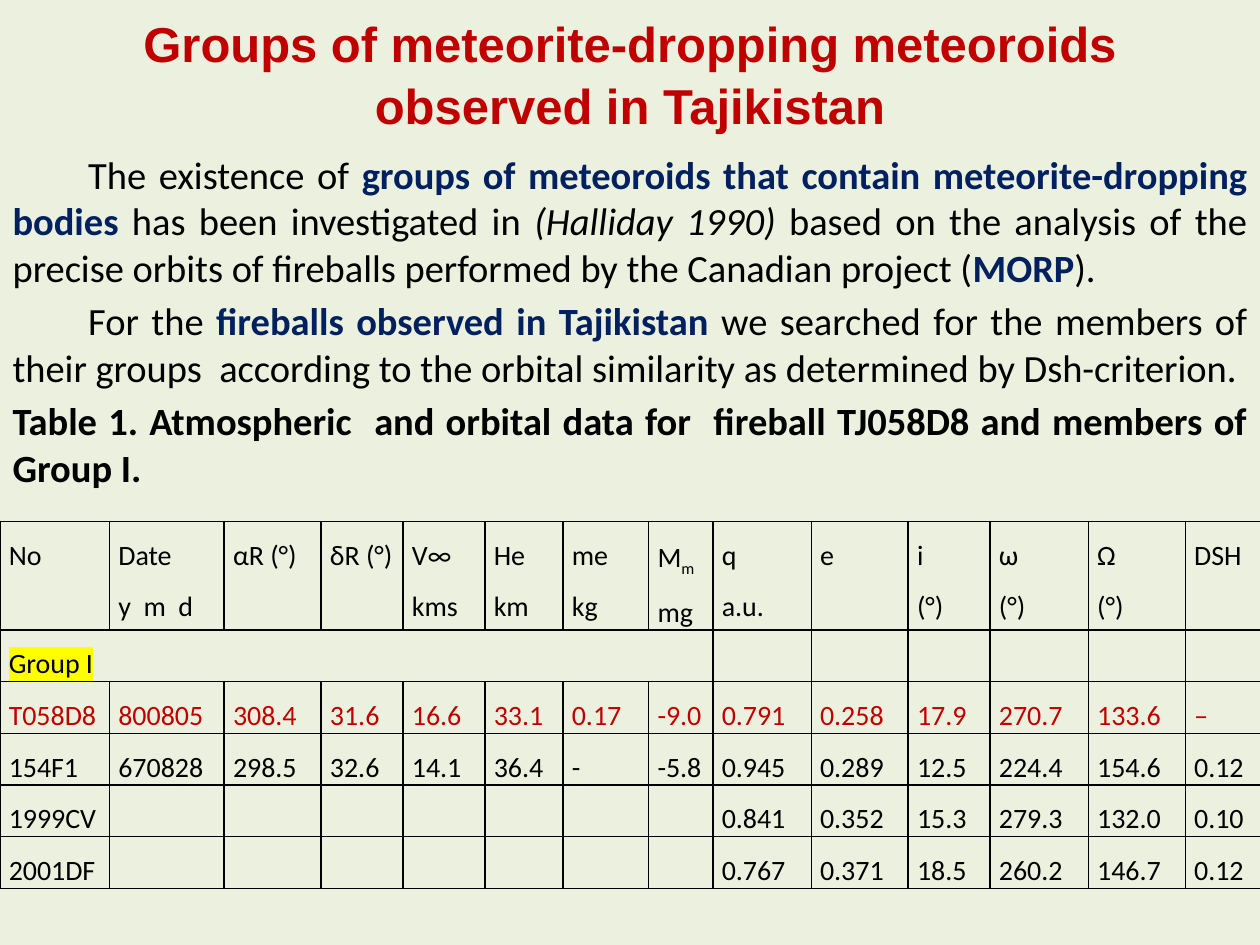
"""Build a slide on groups of meteorite-dropping meteoroids with a data table."""
from lxml import etree
from pptx import Presentation
from pptx.dml.color import RGBColor
from pptx.enum.text import MSO_ANCHOR, MSO_AUTO_SIZE, PP_ALIGN
from pptx.oxml.ns import qn
from pptx.util import Inches, Pt

CENTER, JUSTIFY = PP_ALIGN.CENTER, PP_ALIGN.JUSTIFY
MIDDLE, TOP = MSO_ANCHOR.MIDDLE, MSO_ANCHOR.TOP
NO_FIT = MSO_AUTO_SIZE.NONE

PALE_GREEN = RGBColor(0xEB, 0xF1, 0xDE)
RED = RGBColor(0xC0, 0x00, 0x00)
NAVY = RGBColor(0x00, 0x20, 0x60)
BLACK = RGBColor(0x00, 0x00, 0x00)
YELLOW = RGBColor(0xFF, 0xFF, 0x00)

TITLE = ["Groups of meteorite-dropping meteoroids", "observed in Tajikistan"]

STYLES = {
    "plain": (BLACK, False, False),
    "term": (NAVY, True, False),
    "cite": (BLACK, False, True),
    "caption": (BLACK, True, False),
}

BODY = [
    (0.6, [
        ("The existence of ", "plain"),
        ("groups of meteoroids that contain meteorite-dropping bodies", "term"),
        (" has been investigated in ", "plain"),
        ("(Halliday 1990)", "cite"),
        (" based on the analysis of the precise orbits of fireballs performed "
         "by the Canadian project (", "plain"),
        ("MORP", "term"),
        (").", "plain"),
    ]),
    (0.6, [
        ("For the ", "plain"),
        ("fireballs observed in Tajikistan", "term"),
        (" we searched for the members of their groups  according to the orbital "
         "similarity as determined by Dsh-criterion.", "plain"),
    ]),
    (0, [
        ("Table 1. Atmospheric  and orbital data for  fireball TJ058D8 "
         "and members of Group I.", "caption"),
    ]),
]

HEADERS = [["No"], ["Date", "y  m  d"], ["αR (°)"], ["δR (°)"], ["V∞", "kms"],
           ["He", "km"], ["me", "kg"], [], ["q", "a.u."], ["e"],
           ["i", "(°)"], ["ω", "(°)"], ["Ω", "(°)"], ["DSH"]]
MASS_HEADER = [("M", 0), ("m", -25000), (" mg", 0)]
MASS_COLUMN = 7
GROUP_ROW, GROUP_NAME = 1, "Group I"
HIGHLIGHTED_ROW = 2
NO_DATA = [""] * 7
DATA = [
    ["T058D8", "800805", "308.4", "31.6", "16.6", "33.1", "0.17", "-9.0",
     "0.791", "0.258", "17.9", "270.7", "133.6", "‒"],
    ["154F1", "670828", "298.5", "32.6", "14.1", "36.4", "-", "-5.8",
     "0.945", "0.289", "12.5", "224.4", "154.6", "0.12"],
    ["1999CV", *NO_DATA, "0.841", "0.352", "15.3", "279.3", "132.0", "0.10"],
    ["2001DF", *NO_DATA, "0.767", "0.371", "18.5", "260.2", "146.7", "0.12"],
]
COLUMN_WIDTHS = [0.87, 0.91, 0.77, 0.65, 0.65, 0.62, 0.68,
                 0.51, 0.78, 0.77, 0.65, 0.78, 0.77, 0.61]
ROW_HEIGHTS = [0.86] + [0.41] * 5


def add_span(para, text, size, color=BLACK, bold=False, italic=False, font="Calibri"):
    span = para.add_run()
    span.text = text
    span.font.size = Pt(size)
    span.font.name = font
    span.font.bold = bold
    span.font.italic = italic
    span.font.color.rgb = color
    return span


def next_para(frame, index):
    return frame.add_paragraph() if index else frame.paragraphs[0]


def place(box, top, height, anchor):
    box.left, box.top = Inches(0), Inches(top)
    box.width, box.height = Inches(10), Inches(height)
    box.fill.solid()
    box.fill.fore_color.rgb = PALE_GREEN
    frame = box.text_frame
    frame.auto_size = NO_FIT
    frame.word_wrap = True
    frame.vertical_anchor = anchor
    return frame


def fill_title(box):
    para = place(box, 0, 1.15, MIDDLE).paragraphs[0]
    para.alignment = CENTER
    para.line_spacing = 1.05
    for index, line in enumerate(TITLE):
        if index:
            para.add_line_break()
        add_span(para, line, 28, RED, bold=True, font="Arial")


def fill_body(box):
    frame = place(box, 1.15, 6.35, TOP)
    for index, (indent, spans) in enumerate(BODY):
        para = next_para(frame, index)
        para.alignment = JUSTIFY
        para.space_before = Pt(4.4)
        para._p.get_or_add_pPr().set("indent", str(Inches(indent)))
        for text, style in spans:
            add_span(para, text, 22, *STYLES[style])


def format_cell(cell):
    cell.margin_left = cell.margin_right = Inches(0.07)
    cell.margin_top = cell.margin_bottom = Inches(0)
    properties = cell._tc.get_or_add_tcPr()
    for side in ("lnL", "lnR", "lnT", "lnB"):
        line = etree.SubElement(properties, qn(f"a:{side}"), w=str(Pt(1)))
        solid = etree.SubElement(line, qn("a:solidFill"))
        etree.SubElement(solid, qn("a:srgbClr"), val=str(BLACK))
    cell.fill.background()


def write_cell(cell, lines, color=BLACK):
    for index, text in enumerate(lines):
        para = next_para(cell.text_frame, index)
        para.line_spacing = 1.5
        add_span(para, text, 16, color)


def highlight(span):
    mark = etree.Element(qn("a:highlight"))
    etree.SubElement(mark, qn("a:srgbClr"), val=str(YELLOW))
    span._r.rPr.find(qn("a:solidFill")).addnext(mark)


def add_data_table(page):
    table = page.shapes.add_table(
        len(ROW_HEIGHTS), len(COLUMN_WIDTHS), Inches(0), Inches(4.14),
        Inches(sum(COLUMN_WIDTHS)), Inches(sum(ROW_HEIGHTS))).table
    table.first_row = table.horz_banding = False
    for column, width in zip(table.columns, COLUMN_WIDTHS):
        column.width = Inches(width)
    for row, height in zip(table.rows, ROW_HEIGHTS):
        row.height = Inches(height)
    for cell in table.iter_cells():
        format_cell(cell)

    for column, lines in enumerate(HEADERS):
        write_cell(table.cell(0, column), lines)
    mass = table.cell(0, MASS_COLUMN).text_frame.paragraphs[0]
    mass.line_spacing = 1.5
    for text, baseline in MASS_HEADER:
        span = add_span(mass, text, 16)
        if baseline:
            span.font._rPr.set("baseline", str(baseline))

    group = table.cell(GROUP_ROW, 0)
    group.merge(table.cell(GROUP_ROW, MASS_COLUMN))
    write_cell(group, [GROUP_NAME])
    highlight(group.text_frame.paragraphs[0].runs[0])

    for row, values in enumerate(DATA, start=GROUP_ROW + 1):
        color = RED if row == HIGHLIGHTED_ROW else BLACK
        for column, value in enumerate(values):
            if value:
                write_cell(table.cell(row, column), [value], color)


def main():
    deck = Presentation()
    deck.slide_width, deck.slide_height = Inches(10), Inches(7.5)
    page = deck.slides.add_slide(deck.slide_layouts[0])
    fill_title(page.shapes.title)
    fill_body(page.placeholders[1])
    add_data_table(page)
    deck.save("out.pptx")


if __name__ == "__main__":
    main()
